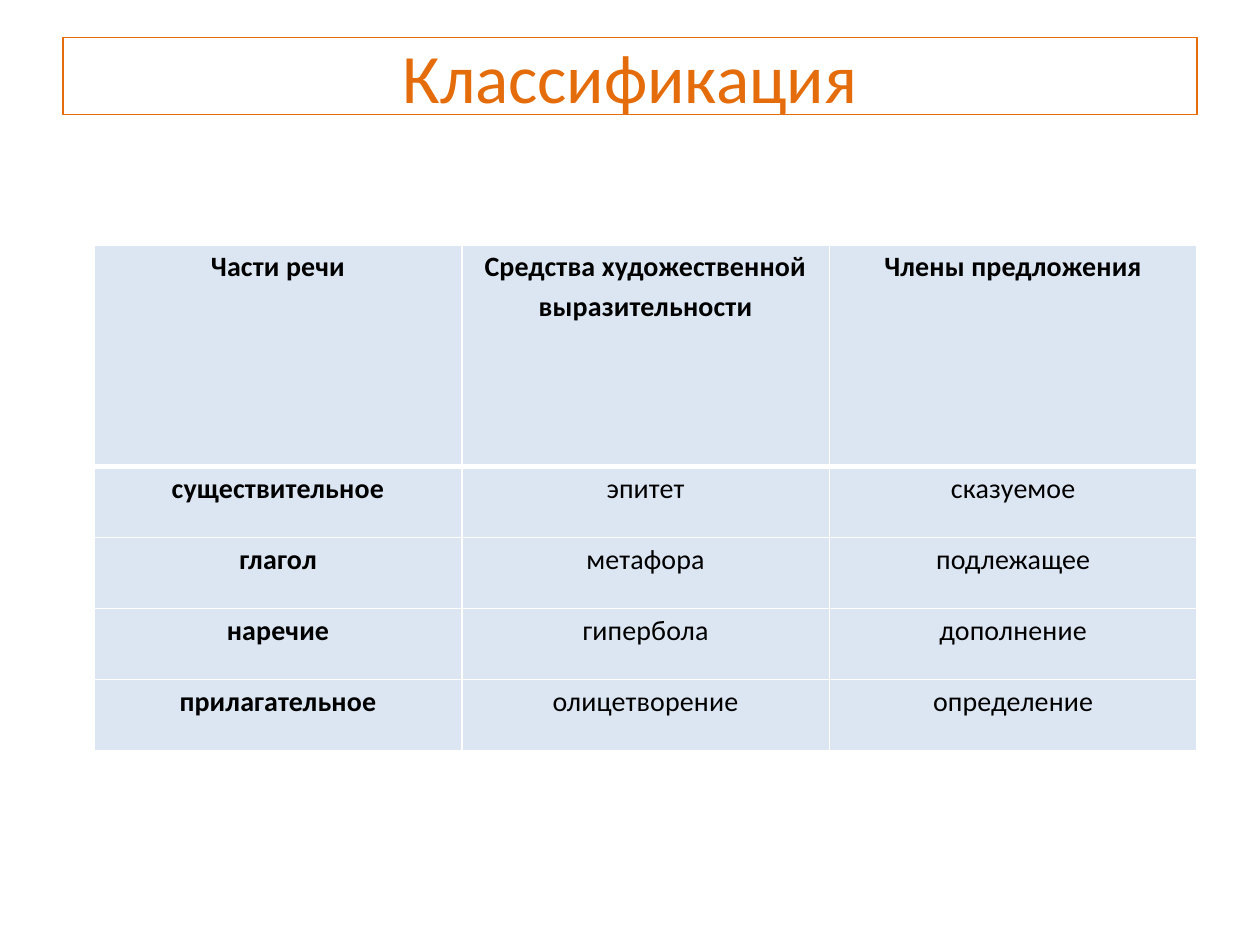
from dataclasses import dataclass

from lxml import etree
from pptx import Presentation
from pptx import util as u
from pptx.dml.color import RGBColor
from pptx.enum import text
from pptx.oxml import ns

COLORS = {"accent": "E46C0A", "cell": "DCE6F2", "border": "FFFFFF", "ink": "000000"}
FONT = "Calibri"
COLUMN_WIDTH = u.Cm(7.41)
HEADER_HEIGHT = u.Cm(4.47)
ROW_HEIGHT = u.Cm(1.43)


@dataclass
class Row:
    part_of_speech: str
    device: str
    sentence_member: str
    header: bool = False


ROWS = [
    Row("Части речи", "Средства художественной выразительности", "Члены предложения", header=True),
    Row("существительное", "эпитет", "сказуемое"),
    Row("глагол", "метафора", "подлежащее"),
    Row("наречие", "гипербола", "дополнение"),
    Row("прилагательное", "олицетворение", "определение"),
]


def color(name: str) -> RGBColor:
    return RGBColor.from_string(COLORS[name])


def write(frame, words: str, *, size: float, ink: str, bold: bool = False,
          line_spacing: float | None = None, tracking: int | None = None) -> None:
    para = frame.paragraphs[0]
    para.alignment = text.PP_ALIGN.CENTER
    if line_spacing is not None:
        para.line_spacing = line_spacing
    span = para.add_run()
    span.text = words
    span.font.name = FONT
    span.font.size = u.Pt(size)
    span.font.bold = bold
    span.font.color.rgb = color(ink)
    if tracking is not None:
        span.font._element.set("spc", str(tracking))


def add_border(cell, side: str, points: float) -> None:
    properties = cell._tc.get_or_add_tcPr()
    line = etree.SubElement(properties, ns.qn(f"a:ln{side}"), w=str(u.Pt(points)))
    fill = etree.SubElement(line, ns.qn("a:solidFill"))
    etree.SubElement(fill, ns.qn("a:srgbClr"), val=COLORS["border"])


def draw_cell(cell, words: str, *, bold: bool, top: float, bottom: float) -> None:
    for side, points in {"L": 1, "R": 1, "T": top, "B": bottom}.items():
        add_border(cell, side, points)
    cell.fill.solid()
    cell.fill.fore_color.rgb = color("cell")
    cell.margin_left = cell.margin_right = u.Cm(0.18)
    cell.margin_top = cell.margin_bottom = 0
    write(cell.text_frame, words, size=16, ink="ink", bold=bold,
          line_spacing=1.15, tracking=10)


def draw_title(page, words: str) -> None:
    box = page.shapes.title
    box.left, box.top = u.Cm(1.27), u.Cm(0.76)
    box.width, box.height = u.Cm(22.86), u.Cm(1.55)
    box.line.color.rgb = color("accent")
    box.line.width = u.Pt(0.75)
    box.text_frame.vertical_anchor = text.MSO_ANCHOR.MIDDLE
    box.text_frame.auto_size = text.MSO_AUTO_SIZE.NONE
    write(box.text_frame, words, size=39.6, ink="accent")


def draw_table(page, rows: list[Row]) -> None:
    height = HEADER_HEIGHT + ROW_HEIGHT * (len(rows) - 1)
    table = page.shapes.add_table(len(rows), 3, u.Cm(1.9), u.Cm(4.94),
                                  COLUMN_WIDTH * 3, height).table
    for column in table.columns:
        column.width = COLUMN_WIDTH
    for index, row in enumerate(rows):
        table.rows[index].height = HEADER_HEIGHT if row.header else ROW_HEIGHT
        top = 3 if index and rows[index - 1].header else 1
        bottom = 3 if row.header else 1
        entries = (row.part_of_speech, row.device, row.sentence_member)
        for position, words in enumerate(entries):
            draw_cell(table.cell(index, position), words,
                      bold=row.header or position == 0, top=top, bottom=bottom)


def main() -> None:
    deck = Presentation()
    deck.slide_width, deck.slide_height = u.Cm(25.4), u.Cm(19.05)
    page = deck.slides.add_slide(deck.slide_layouts[5])
    draw_title(page, "Классификация")
    draw_table(page, ROWS)
    deck.save("out.pptx")


if __name__ == "__main__":
    main()
